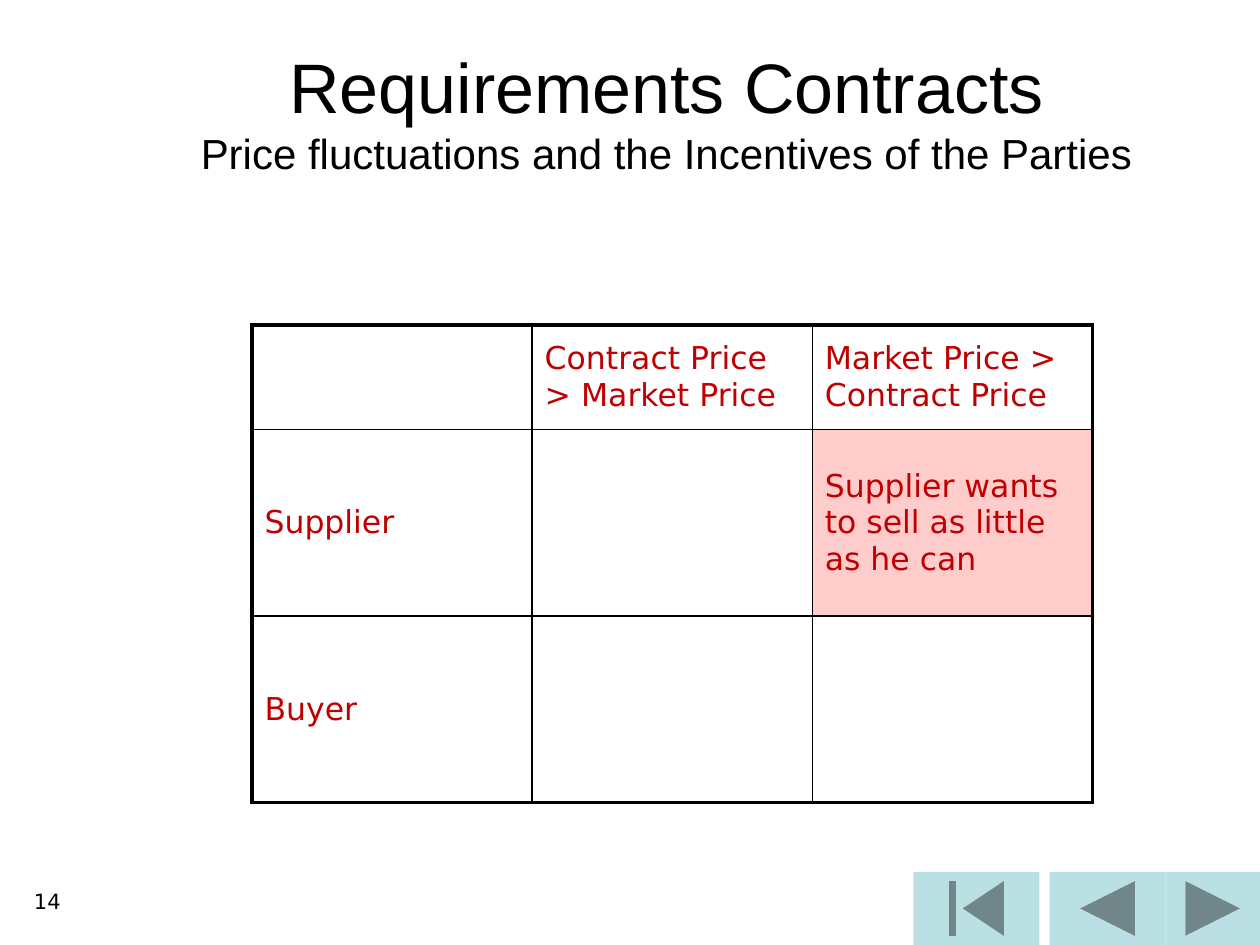
from lxml.etree import SubElement
from pptx import Presentation
from pptx.dml.color import RGBColor
from pptx.enum.shapes import MSO_SHAPE
from pptx.enum.text import MSO_ANCHOR, PP_ALIGN
from pptx.oxml.ns import qn
from pptx.util import Inches, Pt

BLACK = RGBColor(0x00, 0x00, 0x00)
WHITE = RGBColor(0xFF, 0xFF, 0xFF)
RED = RGBColor(0xC0, 0x00, 0x00)
PINK = RGBColor(0xFF, 0xCC, 0xCC)
TEAL = RGBColor(0xBB, 0xE0, 0xE3)
TITLE_FONT, BODY_FONT = "Arial", "DejaVu Sans"

HEADING = [("Requirements Contracts", 40),
           ("Price fluctuations and the Incentives of the Parties", 24)]
PAGE_NUMBER = "14"
INCENTIVES = [
    ["", "Contract Price > Market Price", "Market Price > Contract Price"],
    ["Supplier", "", "Supplier wants to sell as little as he can"],
    ["Buyer", "", ""],
]
CELL_FILLS = {(1, 1): WHITE, (1, 2): PINK, (2, 2): WHITE}
ROW_HEIGHTS = [0.83, 1.48, 1.48]
TABLE_LEFT, TABLE_TOP, TABLE_WIDTH = 2, 2.58, 6.67
OUTER_LINE, INNER_LINE = 2.25, 1
BUTTONS = [  # shape, left, width
    (MSO_SHAPE.ACTION_BUTTON_BACK_OR_PREVIOUS, 8.33, 0.92),
    (MSO_SHAPE.ACTION_BUTTON_BEGINNING, 7.25, 1),
    (MSO_SHAPE.ACTION_BUTTON_FORWARD_OR_NEXT, 9.25, 0.75),
]
BUTTON_TOP, BUTTON_HEIGHT = 6.92, 0.58


def style(run, font, size, color):
    run.font.name = font
    run.font.size = Pt(size)
    run.font.color.rgb = color


def place(shape, left, top, width, height):
    shape.left, shape.top = Inches(left), Inches(top)
    shape.width, shape.height = Inches(width), Inches(height)


def set_borders(cell, widths):
    """Draw the left, right, top and bottom borders, widths in points."""
    properties = cell._tc.get_or_add_tcPr()
    for index, (side, width) in enumerate(zip("LRTB", widths)):
        line = properties.makeelement(qn(f"a:ln{side}"), {"w": str(Pt(width))})
        fill = SubElement(line, qn("a:solidFill"))
        SubElement(fill, qn("a:srgbClr"), val=str(BLACK))
        properties.insert(index, line)


def add_buttons(slide):
    for kind, left, width in BUTTONS:
        button = slide.shapes.add_shape(
            kind, Inches(left), Inches(BUTTON_TOP), Inches(width), Inches(BUTTON_HEIGHT))
        button.shadow.inherit = False
        button.fill.solid()
        button.fill.fore_color.rgb = TEAL
        button.line.fill.background()


def add_page_number(slide):
    box = slide.shapes.add_textbox(Inches(-1.5), Inches(7), Inches(2.08), Inches(0.5))
    box.text_frame.word_wrap = True
    box.text_frame.text = PAGE_NUMBER
    paragraph = box.text_frame.paragraphs[0]
    paragraph.alignment = PP_ALIGN.RIGHT
    style(paragraph.runs[0], BODY_FONT, 12, BLACK)


def fill_title(title):
    place(title, 0.58, 0, 9.42, 1.75)
    title.text_frame.text = "\v".join(line for line, _ in HEADING)
    title.text_frame.vertical_anchor = MSO_ANCHOR.MIDDLE
    paragraph = title.text_frame.paragraphs[0]
    paragraph.alignment = PP_ALIGN.CENTER
    for run, (_, size) in zip(paragraph.runs, HEADING):
        style(run, TITLE_FONT, size, BLACK)


def add_incentives(slide):
    rows, columns = len(INCENTIVES), len(INCENTIVES[0])
    table = slide.shapes.add_table(
        rows, columns, Inches(TABLE_LEFT), Inches(TABLE_TOP),
        Inches(TABLE_WIDTH), Inches(sum(ROW_HEIGHTS))).table
    table.first_row = table.horz_banding = False
    for row, height in zip(table.rows, ROW_HEIGHTS):
        row.height = Inches(height)
    for r, texts in enumerate(INCENTIVES):
        for c, text in enumerate(texts):
            cell = table.cell(r, c)
            cell.vertical_anchor = MSO_ANCHOR.MIDDLE
            if (r, c) in CELL_FILLS:
                cell.fill.solid()
                cell.fill.fore_color.rgb = CELL_FILLS[r, c]
            else:
                cell.fill.background()
            on_edge = (c == 0, c == columns - 1, r == 0, r == rows - 1)
            set_borders(cell, [OUTER_LINE if edge else INNER_LINE for edge in on_edge])
            if text:
                cell.text_frame.text = text
                paragraph = cell.text_frame.paragraphs[0]
                paragraph.space_before = Pt(3.6)
                style(paragraph.runs[0], BODY_FONT, 18, RED)


def main():
    presentation = Presentation()
    presentation.slide_width, presentation.slide_height = Inches(10), Inches(7.5)
    title_only = presentation.slide_layouts[5]
    slide = presentation.slides.add_slide(title_only)
    add_buttons(slide)
    add_page_number(slide)
    fill_title(slide.shapes.title)
    add_incentives(slide)
    presentation.save("out.pptx")


if __name__ == "__main__":
    main()
